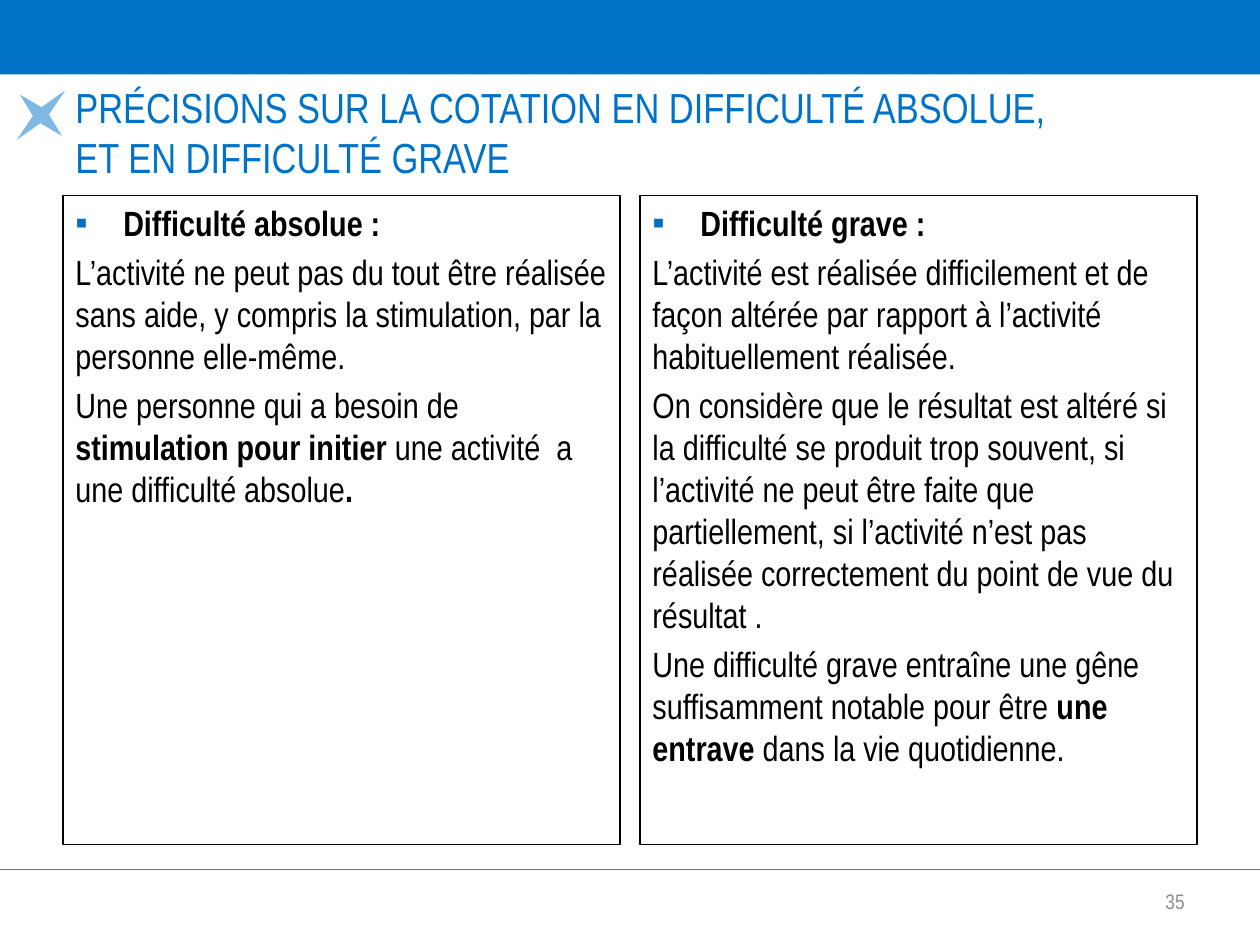
from dataclasses import dataclass

import pptx
import pptx.dml.color
import pptx.enum.shapes
import pptx.enum.text
import pptx.oxml
import pptx.oxml.ns
import pptx.util
from pptx.util import Inches

FONT = "Arial Narrow"
BLUE = "0072C6"
BLACK = "000000"
SHAPE = pptx.enum.shapes.MSO_SHAPE
ANCHOR = pptx.enum.text.MSO_ANCHOR
ALIGN = pptx.enum.text.PP_ALIGN


@dataclass
class Run:
    text: str
    bold: bool = False


@dataclass
class Panel:
    heading: str
    paragraphs: list[list[Run]]


PANELS = [
    Panel("Difficulté absolue :", [
        [Run("L’activité ne peut pas du tout être réalisée sans aide, "
             "y compris la stimulation, par la personne elle-même.")],
        [Run("Une personne qui a besoin de "),
         Run("stimulation pour initier", True),
         Run(" une activité  a une difficulté absolue"),
         Run(".", True)],
    ]),
    Panel("Difficulté grave :", [
        [Run("L’activité est réalisée difficilement et de façon altérée "
             "par rapport à l’activité habituellement réalisée.")],
        [Run("On considère que le résultat est altéré si la difficulté se "
             "produit trop souvent, si l’activité ne peut être faite que "
             "partiellement, si l’activité n’est pas réalisée correctement "
             "du point de vue du résultat .")],
        [Run("Une difficulté grave entraîne une gêne suffisamment notable "
             "pour être "),
         Run("une entrave ", True),
         Run("dans la vie quotidienne.")],
    ]),
]


def set_color(color_format, value: str) -> None:
    color_format.rgb = pptx.dml.color.RGBColor.from_string(value)


def add_xml(parent, tag: str, **attributes: str):
    element = pptx.oxml.ns.qn(tag)
    child = parent.makeelement(element, attributes)
    parent.append(child)
    return child


def format_run(r, size: int, color: str, bold: bool = False) -> None:
    r.font.name = FONT
    r.font.size = pptx.util.Pt(size)
    r.font.bold = bold
    set_color(r.font.color, color)


def add_filled(s, kind, left: float, top: float, width: float, height: float):
    sp = s.shapes.add_shape(kind, Inches(left), Inches(top), Inches(width), Inches(height))
    sp.shadow.inherit = False
    sp.fill.solid()
    set_color(sp.fill.fore_color, BLUE)
    sp.line.fill.background()
    return sp


def add_text(s, text: str, left: float, top: float, width: float, height: float,
             size: int, color: str, align) -> None:
    sp = s.shapes.add_textbox(Inches(left), Inches(top), Inches(width), Inches(height))
    tf = sp.text_frame
    tf.word_wrap = True
    tf.vertical_anchor = ANCHOR.MIDDLE
    p = tf.paragraphs[0]
    p.text = text
    p.alignment = align
    for r in p.runs:
        format_run(r, size, color)


def add_bullet(p) -> None:
    p_pr = p._p.get_or_add_pPr()
    p_pr.set("marL", str(Inches(0.38)))
    p_pr.set("indent", str(Inches(-0.38)))
    add_xml(add_xml(p_pr, "a:buClr"), "a:srgbClr", val="0070C0")
    add_xml(p_pr, "a:buFont", typeface="Arial")
    add_xml(p_pr, "a:buChar", char="▪")


def add_panel(s, panel: Panel, left: float) -> None:
    sp = s.shapes.add_shape(SHAPE.RECTANGLE, Inches(left), Inches(1.55),
                            Inches(4.42), Inches(5.15))
    sp.shadow.inherit = False
    sp.fill.background()
    set_color(sp.line.color, BLACK)
    sp.line.width = pptx.util.Pt(0.75)
    tf = sp.text_frame
    tf.word_wrap = True
    tf.vertical_anchor = ANCHOR.TOP
    for i, runs in enumerate([[Run(panel.heading, True)], *panel.paragraphs]):
        p = tf.add_paragraph() if i else tf.paragraphs[0]
        p.alignment = ALIGN.LEFT
        p.space_before = pptx.util.Pt(4)
        if i == 0:
            add_bullet(p)
        for run in runs:
            r = p.add_run()
            r.text = run.text
            format_run(r, 20, BLACK, run.bold)


def add_rule(s, y: float) -> None:
    line = s.shapes.add_connector(pptx.enum.shapes.MSO_CONNECTOR.STRAIGHT,
                                  Inches(0), Inches(y), Inches(10), Inches(y))
    set_color(line.line.color, "4B7EBC")
    line.line.width = pptx.util.Pt(0.75)
    add_xml(line._element.spPr, "a:effectLst")


def main() -> None:
    prs = pptx.Presentation()
    prs.slide_width = Inches(10)
    prs.slide_height = Inches(7.5)
    s = prs.slides.add_slide(prs.slide_layouts[6])

    add_filled(s, SHAPE.RECTANGLE, 0, 0, 10, 0.59)
    star = add_filled(s, SHAPE.STAR_4_POINT, 0.09, 0.64, 0.47, 0.55)
    star.rotation = 44.4
    star_color = star._element.spPr.find(".//" + pptx.oxml.ns.qn("a:srgbClr"))
    add_xml(star_color, "a:alpha", val="50000")
    add_rule(s, 6.9)

    add_text(s, "PRÉCISIONS SUR LA COTATION EN DIFFICULTÉ ABSOLUE, \v"
                "ET EN DIFFICULTÉ GRAVE", 0.5, 0.61, 9, 0.87, 24, BLUE, ALIGN.LEFT)
    for i, panel in enumerate(PANELS):
        add_panel(s, panel, 0.5 + i * 4.58)
    add_text(s, "35", 7.17, 6.95, 2.33, 0.4, 12, "8C8C8C", ALIGN.RIGHT)

    prs.save("out.pptx")


if __name__ == "__main__":
    main()
